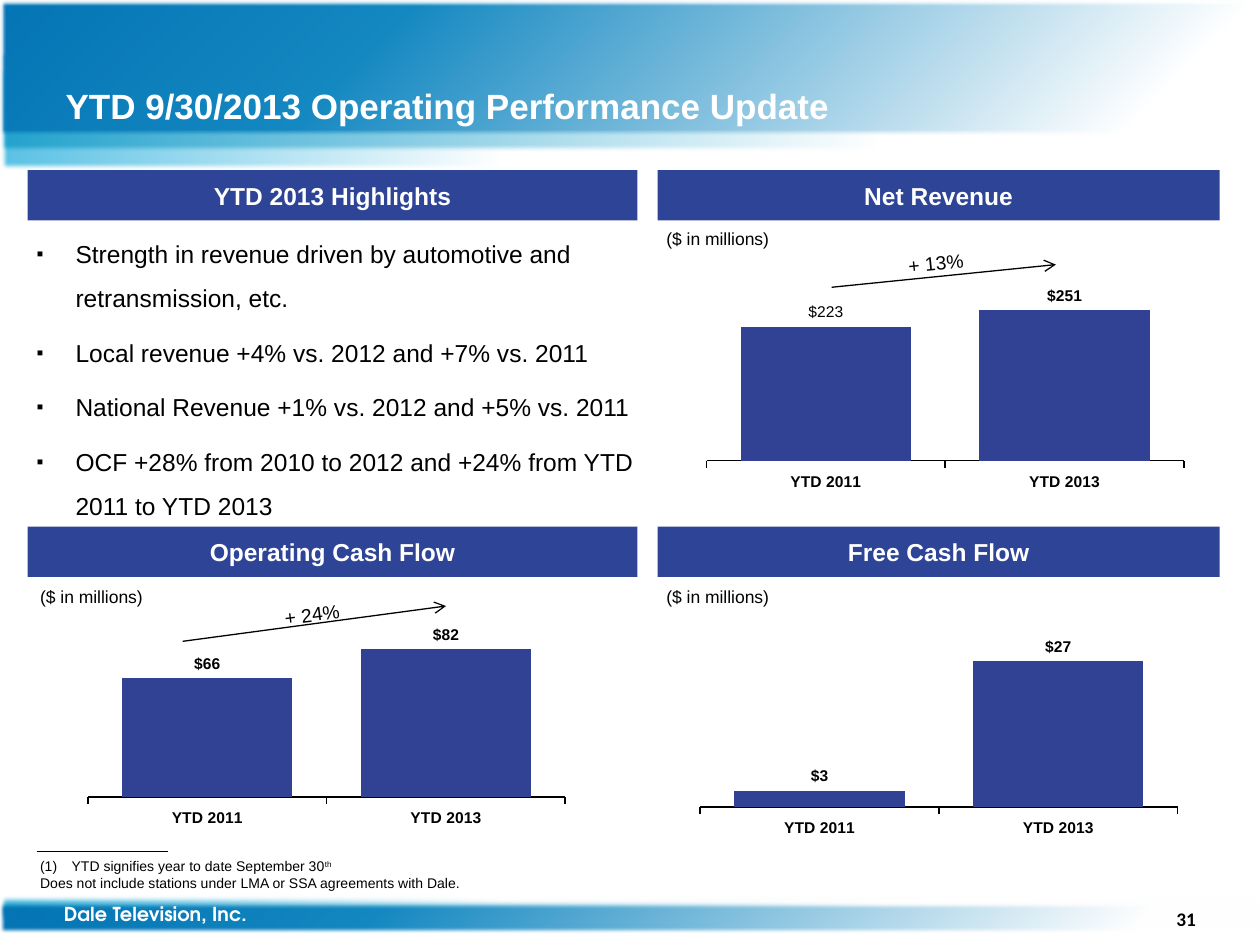
import dataclasses
import typing

import lxml.etree
import pptx
import pptx.chart.data
import pptx.dml.color
import pptx.enum.chart
import pptx.enum.shapes
import pptx.enum.text
import pptx.oxml
import pptx.oxml.ns
import pptx.util

EMU_PER_PX = 9144
qn = pptx.oxml.ns.qn
Align = pptx.enum.text.PP_ALIGN
Anchor = pptx.enum.text.MSO_ANCHOR


@dataclasses.dataclass(frozen=True)
class Theme:
    font: str = "Arial"
    number_font: str = "Calibri"
    company_font: str = "TeX Gyre Adventor"
    white: str = "FFFFFF"
    black: str = "000000"
    header: str = "2E4497"
    bar: str = "314294"
    title: float = 20
    body: float = 14
    callout: float = 11
    unit: float = 10
    chart: float = 8.9
    note: float = 8


THEME = Theme()


class Box(typing.NamedTuple):
    left: int
    top: int
    width: int
    height: int


class Band(typing.NamedTuple):
    box: Box
    stops: tuple
    radial: bool
    flipped: bool


class Panel(typing.NamedTuple):
    heading: str
    box: Box
    unit: Box | None = None


class BarChart(typing.NamedTuple):
    left: int
    top: int
    values: tuple
    maximum: int
    plain_label: str = ""


class Growth(typing.NamedTuple):
    text: str
    box: Box
    rotation: float
    start: tuple
    end: tuple


LIGHT = ((0, "59C1E4"), (40, "FFFFFF"))
MIDDLE = ((0, "22A2CD"), (70, "FFFFFF"))
DARK = ((0, "0474B4"), (30, "1488C1"), (90, "FFFFFF"))
BANDS = [
    Band(Box(0, 53, 1000, 82), LIGHT, False, False),
    Band(Box(0, 39, 1000, 82), MIDDLE, False, False),
    Band(Box(0, 0, 1000, 108), DARK, True, False),
    Band(Box(0, 710, 1000, 19), LIGHT, False, True),
    Band(Box(0, 713, 1000, 19), MIDDLE, False, True),
    Band(Box(0, 716, 1000, 25), DARK, True, True),
]
PANELS = [
    Panel("YTD 2013 Highlights", Box(22, 135, 484, 40)),
    Panel("Net Revenue", Box(522, 135, 446, 40), Box(519, 176, 146, 27)),
    Panel("Operating Cash Flow", Box(22, 418, 484, 40), Box(22, 460, 146, 27)),
    Panel("Free Cash Flow", Box(522, 418, 446, 40), Box(519, 460, 146, 27)),
]
CHARTS = [
    BarChart(551, 213, (223, 251), 270, "$223"),
    BarChart(60, 480, (66, 82), 90),
    BarChart(546, 488, (3, 27), 30),
]
GROWTHS = [
    Growth("+ 13%", Box(711, 194, 77, 29), 354.3, (660, 228), (838, 210)),
    Growth("+ 24%", Box(216, 473, 69, 29), 352.8, (145, 509), (354, 481)),
]
HIGHLIGHTS = [
    "Strength in revenue driven by automotive and retransmission, etc.",
    "Local revenue +4% vs. 2012 and +7% vs. 2011",
    "National Revenue +1% vs. 2012 and +5% vs. 2011",
    "OCF +28% from 2010 to 2012 and +24% from YTD 2011 to YTD 2013",
]


def px(length: int) -> pptx.util.Emu:
    return pptx.util.Emu(length * EMU_PER_PX)


def place(box: Box) -> list:
    return [px(length) for length in box]


def rgb(color: str) -> pptx.dml.color.RGBColor:
    return pptx.dml.color.RGBColor.from_string(color)


def style(font, size: float, color: str = THEME.black, bold: bool = False, name: str = THEME.font) -> None:
    font.size, font.bold, font.name = pptx.util.Pt(size), bold, name
    font.color.rgb = rgb(color)


def set_margins(frame, horizontal: int, vertical: int) -> None:
    frame.margin_left = frame.margin_right = px(horizontal)
    frame.margin_top = frame.margin_bottom = px(vertical)


def add_text(slide, box: Box, text: str, size: float, align=Align.LEFT, **look):
    shape = slide.shapes.add_textbox(*place(box))
    shape.text_frame.word_wrap = True
    shape.text_frame.text = text
    for paragraph in shape.text_frame.paragraphs:
        paragraph.alignment = align
        style(paragraph.font, size, **look)
    return shape


def add_rectangle(slide, box: Box):
    shape = slide.shapes.add_shape(pptx.enum.shapes.MSO_SHAPE.RECTANGLE, *place(box))
    shape.shadow.inherit = False
    shape.line.fill.background()
    return shape


def add_band(slide, band: Band) -> None:
    shape = add_rectangle(slide, band.box)
    shape.fill.gradient()
    properties = shape.element.spPr
    stops = "".join(f'<a:gs pos="{position * 1000}"><a:srgbClr val="{color}"/></a:gs>' for position, color in band.stops)
    direction = (
        '<a:path path="circle"><a:fillToRect r="100000" b="100000"/></a:path>' if band.radial else '<a:lin ang="0" scaled="1"/>'
    )
    gradient = pptx.oxml.parse_xml(
        f'<a:gradFill {pptx.oxml.ns.nsdecls("a")} rotWithShape="1"><a:gsLst>{stops}</a:gsLst>{direction}</a:gradFill>'
    )
    properties.replace(properties.find(qn("a:gradFill")), gradient)
    lxml.etree.SubElement(properties.find(qn("a:effectLst")), qn("a:softEdge"), rad="31750")
    if band.flipped:
        properties.find(qn("a:xfrm")).set("flipV", "1")


def add_panel(slide, panel: Panel) -> None:
    shape = add_rectangle(slide, panel.box)
    shape.fill.solid()
    shape.fill.fore_color.rgb = rgb(THEME.header)
    frame = shape.text_frame
    frame.text = panel.heading
    frame.vertical_anchor = Anchor.MIDDLE
    set_margins(frame, 5, 5)
    frame.paragraphs[0].alignment = Align.CENTER
    style(frame.paragraphs[0].font, THEME.body, THEME.white, True)
    if panel.unit:
        add_text(slide, panel.unit, "($ in millions)", THEME.unit)


def add_line(slide, start: tuple, end: tuple, arrow: bool = False) -> None:
    points = [px(length) for length in (*start, *end)]
    connector = slide.shapes.add_connector(pptx.enum.shapes.MSO_CONNECTOR.STRAIGHT, *points)
    connector.line.color.rgb = rgb(THEME.black)
    connector.line.width = pptx.util.Pt(0.75)
    properties = connector.element.spPr
    if arrow:
        lxml.etree.SubElement(properties.find(qn("a:ln")), qn("a:tailEnd"), type="arrow")
    lxml.etree.SubElement(properties, qn("a:effectLst"))


def add_growth(slide, growth: Growth) -> None:
    add_line(slide, growth.start, growth.end, arrow=True)
    add_text(slide, growth.box, growth.text, THEME.callout).rotation = growth.rotation


def set_plot_area(chart) -> None:
    area = chart.element.find(f".//{qn('c:plotArea')}")
    for old in area.findall(qn("c:layout")):
        area.remove(old)
    layout = lxml.etree.Element(qn("c:layout"))
    manual = lxml.etree.SubElement(layout, qn("c:manualLayout"))
    settings = dict(layoutTarget="inner", xMode="edge", yMode="edge", x="0.024", y="0.116", w="0.931", h="0.625")
    for name, value in settings.items():
        lxml.etree.SubElement(manual, qn(f"c:{name}"), val=value)
    area.insert(0, layout)


def add_bar_chart(slide, bars: BarChart) -> None:
    enum = pptx.enum.chart
    data = pptx.chart.data.CategoryChartData()
    data.categories = ["YTD 2011", "YTD 2013"]
    data.add_series("Series 1", bars.values)
    box = Box(bars.left, bars.top, 407, 206)
    chart = slide.shapes.add_chart(enum.XL_CHART_TYPE.COLUMN_CLUSTERED, *place(box), data).chart
    chart.has_legend = chart.has_title = False
    style(chart.font, THEME.chart, bold=True)
    set_plot_area(chart)
    category, value = chart.category_axis, chart.value_axis
    category.format.line.color.rgb = rgb(THEME.black)
    category.format.line.width = pptx.util.Pt(0.89)
    category.major_tick_mark = enum.XL_TICK_MARK.OUTSIDE
    value.minimum_scale, value.maximum_scale, value.major_unit = 0, bars.maximum, 30
    value.has_major_gridlines = False
    value.tick_label_position = enum.XL_TICK_LABEL_POSITION.NONE
    value.major_tick_mark = enum.XL_TICK_MARK.NONE
    value.format.line.fill.background()
    plot = chart.plots[0]
    plot.gap_width, plot.vary_by_categories = 40, False
    series = plot.series[0]
    series.format.fill.solid()
    series.format.fill.fore_color.rgb = rgb(THEME.bar)
    labels = series.data_labels
    labels.show_value = True
    labels.number_format, labels.number_format_is_linked = "\\$#,##0", False
    labels.position = enum.XL_LABEL_POSITION.OUTSIDE_END
    style(labels.font, THEME.chart, bold=True)
    if bars.plain_label:
        label = series.points[0].data_label
        label.text_frame.text = bars.plain_label
        style(label.text_frame.paragraphs[0].font, THEME.chart)
        label.position = enum.XL_LABEL_POSITION.OUTSIDE_END


def set_bullet(paragraph, margin: int, indent: int, *elements: tuple) -> None:
    properties = paragraph._p.get_or_add_pPr()
    properties.set("marL", str(px(margin)))
    properties.set("indent", str(px(indent)))
    for tag, attributes in elements:
        properties.insert_element_before(properties.makeelement(qn(tag), attributes), "a:tabLst", "a:defRPr", "a:extLst")


def add_highlights(slide) -> None:
    frame = add_text(slide, Box(22, 174, 484, 246), "\n".join(HIGHLIGHTS), THEME.body).text_frame
    set_margins(frame, 0, 4)
    for paragraph in frame.paragraphs:
        paragraph.line_spacing, paragraph.space_after = 1.5, pptx.util.Pt(6)
        set_bullet(paragraph, 38, -31, ("a:buSzPct", {"val": "80000"}), ("a:buFont", {"typeface": THEME.font}), ("a:buChar", {"char": "▪"}))


def add_footnote(slide) -> None:
    text = "YTD signifies year to date September 30\nDoes not include stations under LMA or SSA agreements with Dale."
    first = add_text(slide, Box(22, 676, 673, 37), text, THEME.note).text_frame.paragraphs[0]
    set_bullet(first, 25, -25, ("a:buFont", {"typeface": THEME.font}), ("a:buAutoNum", {"type": "arabicParenBoth"}))
    ordinal = first.add_run()
    ordinal.text = "th"
    ordinal._r.get_or_add_rPr().set("baseline", "30000")
    add_line(slide, (29, 676), (133, 676))


def set_title(slide, text: str) -> None:
    title = slide.shapes.title
    title.left, title.top, title.width, title.height = place(Box(52, 62, 756, 43))
    slide.shapes.element.append(title.element)
    frame = title.text_frame
    frame.text = text
    frame.auto_size = pptx.enum.text.MSO_AUTO_SIZE.NONE
    frame.vertical_anchor = Anchor.MIDDLE
    set_margins(frame, 0, 4)
    frame.paragraphs[0].alignment = Align.LEFT
    style(frame.paragraphs[0].font, THEME.title, THEME.white, True)


def main() -> None:
    presentation = pptx.Presentation()
    presentation.slide_width, presentation.slide_height = px(1000), px(750)
    slide = presentation.slides.add_slide(presentation.slide_layouts[5])
    for band in BANDS:
        add_band(slide, band)
    add_text(slide, Box(920, 715, 43, 29), "31", THEME.callout, Align.CENTER, bold=True, name=THEME.number_font)
    add_text(slide, Box(41, 711, 290, 29), "Dale Television, Inc.", THEME.callout, color=THEME.white, bold=True, name=THEME.company_font)
    for bars in CHARTS:
        add_bar_chart(slide, bars)
    set_title(slide, "YTD 9/30/2013 Operating Performance Update")
    add_highlights(slide)
    for panel in PANELS:
        add_panel(slide, panel)
    for growth in GROWTHS:
        add_growth(slide, growth)
    add_footnote(slide)
    presentation.save("out.pptx")


if __name__ == "__main__":
    main()
